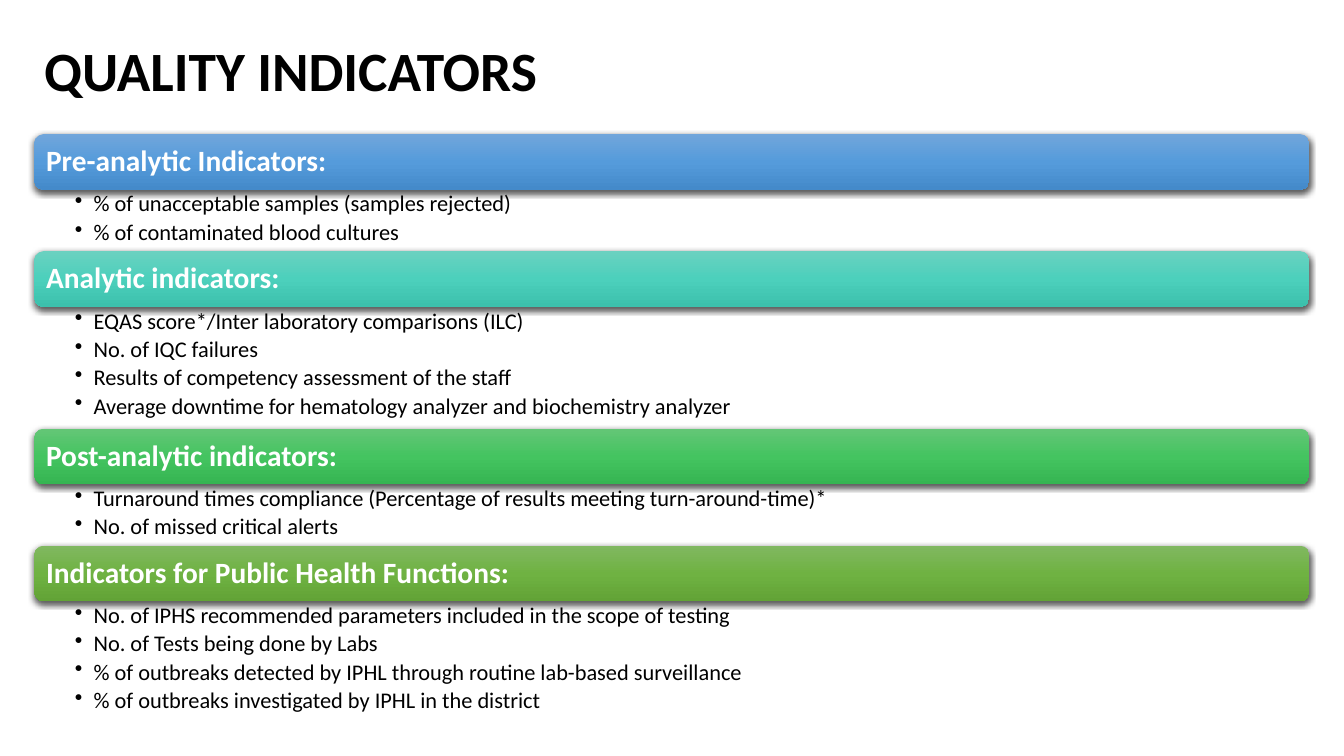
from copy import deepcopy
from lxml import etree
from pptx import Presentation
from pptx import util as u
from pptx.dml import color
from pptx.enum import shapes, text
from pptx.oxml import ns

TITLE = "QUALITY INDICATORS"
SECTIONS = [
    ("Pre-analytic Indicators:", ("71A6DB", "559BDB", "448ACA"), [
        "% of unacceptable samples (samples rejected)",
        "% of contaminated blood cultures",
    ]),
    ("Analytic indicators:", ("6AD1C0", "4CD0BC", "3CC0AC"), [
        "EQAS score*/Inter laboratory comparisons (ILC)",
        "No. of IQC failures",
        "Results of competency assessment of the staff",
        "Average downtime for hematology analyzer and biochemistry analyzer",
    ]),
    ("Post-analytic indicators:", ("64C677", "44C460", "36B552"), [
        "Turnaround times compliance (Percentage of results meeting turn-around-time)*",
        "No. of missed critical alerts",
    ]),
    ("Indicators for Public Health Functions:", ("81B861", "6FB242", "62A336"), [
        "No. of IPHS recommended parameters included in the scope of testing",
        "No. of Tests being done by Labs",
        "% of outbreaks detected by IPHL through routine lab-based surveillance",
        "% of outbreaks investigated by IPHL in the district",
    ]),
]
TITLE_FONT = {"name": "Calibri", "size": u.Pt(39.6), "bold": True}
HEADING_FONT = {"name": "Calibri", "size": u.Pt(21), "bold": True}
ITEM_FONT = {"name": "Calibri", "size": u.Pt(16), "bold": False}
TITLE_FRAME = {"word_wrap": True, "vertical_anchor": text.MSO_ANCHOR.MIDDLE}
HEADING_FRAME = TITLE_FRAME | {"margin_left": u.Pt(6.5), "margin_right": u.Pt(6.5)}
LIST_FRAME = {"word_wrap": True, "vertical_anchor": text.MSO_ANCHOR.TOP,
              "margin_left": u.Pt(28.9), "margin_right": u.Pt(11.5),
              "margin_top": u.Pt(2), "margin_bottom": u.Pt(2)}
LEFT, WIDTH, TOP = 24.5, 910.8, 95.8
BAR_HEIGHT, ITEM_HEIGHT, LIST_PAD = 39.8, 21.6, 0.6


def rgb(value):
    return color.RGBColor.from_string(value)


def apply(target, values):
    for name, value in values.items():
        setattr(target, name, value)


def write(holder, lines, frame_format, font_format, ink, gap=0, bullet=None):
    frame = holder.text_frame
    apply(frame, frame_format)
    frame.text = "\n".join(lines)
    for line in frame.paragraphs:
        apply(line, {"alignment": text.PP_ALIGN.LEFT, "line_spacing": 0.9,
                     "space_after": u.Pt(gap)})
        apply(line.runs[0].font, font_format)
        line.runs[0].font.color.rgb = rgb(ink)
        if bullet:
            props = line._p.get_or_add_pPr()
            props.set("marL", str(u.Pt(13.5)))
            props.set("indent", str(u.Pt(-13.5)))
            etree.SubElement(props, ns.qn("a:buChar"), char=bullet)


def paint(bar, tints):
    bar.line.fill.background()
    bar.fill.gradient()
    bar.fill.gradient_angle = 270
    stops = bar._element.spPr.find(".//" + ns.qn("a:gsLst"))
    stops.insert(1, deepcopy(stops[0]))
    for index, (stop, tint) in enumerate(zip(bar.fill.gradient_stops, tints)):
        stop.position = index / 2
        stop.color.rgb = rgb(tint)


def cast_shadow(bar):
    bar.shadow.inherit = False
    effects = bar._element.spPr.find(ns.qn("a:effectLst"))
    shadow = etree.SubElement(effects, ns.qn("a:outerShdw"), blurRad=str(u.Pt(4.5)),
                              dist=str(u.Pt(1.5)), dir="5400000", algn="ctr", rotWithShape="0")
    black = etree.SubElement(shadow, ns.qn("a:srgbClr"), val="000000")
    etree.SubElement(black, ns.qn("a:alpha"), val="63000")


def main():
    deck = Presentation()
    apply(deck, {"slide_width": u.Pt(960), "slide_height": u.Pt(540)})
    slide = deck.slides.add_slide(deck.slide_layouts[6])

    title = slide.shapes.add_textbox(u.Pt(LEFT), u.Pt(28.8), u.Pt(869), u.Pt(47.5))
    write(title, [TITLE], TITLE_FRAME, TITLE_FONT, "000000")

    top = TOP
    for heading, tints, items in SECTIONS:
        bar = slide.shapes.add_shape(shapes.MSO_SHAPE.ROUNDED_RECTANGLE, u.Pt(LEFT), u.Pt(top),
                                     u.Pt(WIDTH), u.Pt(BAR_HEIGHT))
        paint(bar, tints)
        cast_shadow(bar)
        write(bar, [heading], HEADING_FRAME, HEADING_FONT, "FFFFFF")
        top += BAR_HEIGHT

        list_height = LIST_PAD + ITEM_HEIGHT * len(items)
        indicators = slide.shapes.add_textbox(u.Pt(LEFT), u.Pt(top), u.Pt(WIDTH), u.Pt(list_height))
        write(indicators, items, LIST_FRAME, ITEM_FONT, "000000", gap=3, bullet="•")
        top += list_height

    deck.save("out.pptx")


if __name__ == "__main__":
    main()
